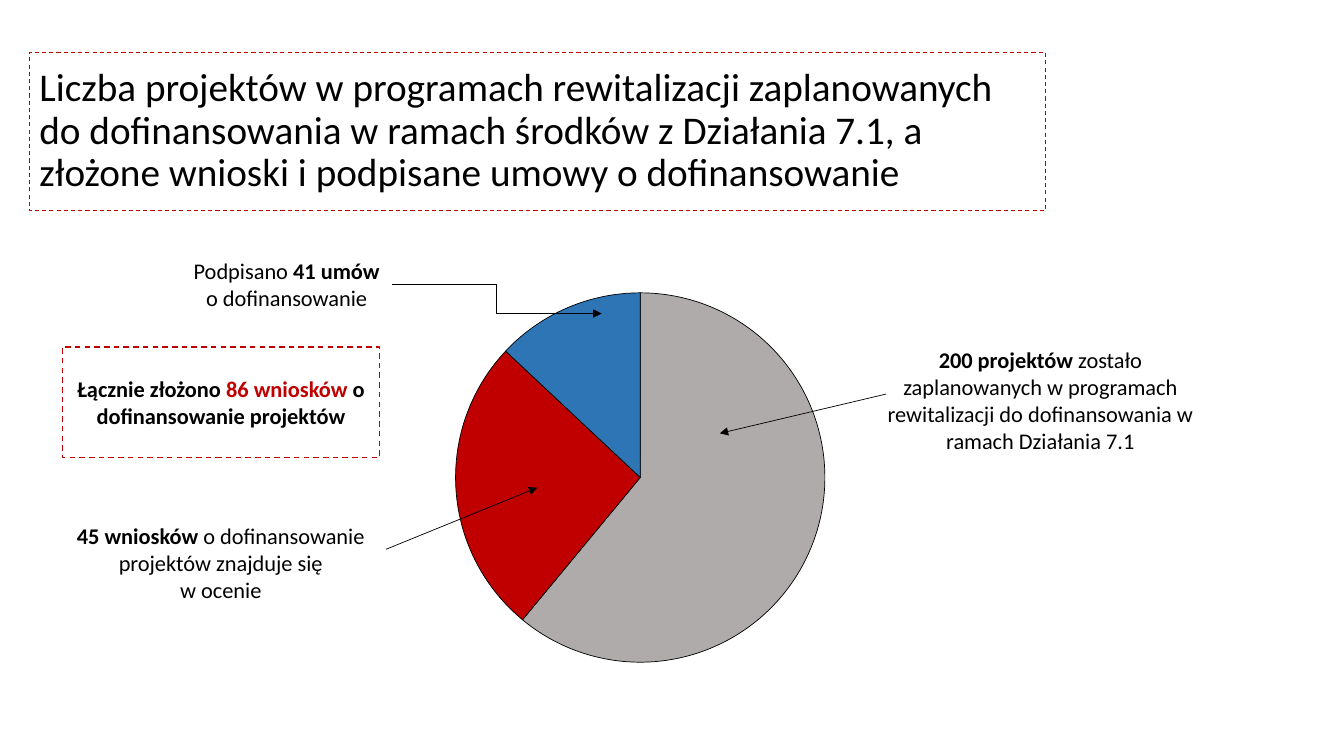
from dataclasses import dataclass

from lxml.etree import SubElement
from pptx import Presentation
from pptx.chart.data import CategoryChartData
from pptx.dml.color import RGBColor
from pptx.enum.chart import XL_CHART_TYPE
from pptx.enum.dml import MSO_LINE
from pptx.enum.shapes import MSO_CONNECTOR, MSO_SHAPE
from pptx.enum.text import MSO_ANCHOR, PP_ALIGN
from pptx.oxml.ns import qn
from pptx.util import Cm, Pt


@dataclass(frozen=True)
class Theme:
    font: str = "Calibri"
    title_size: Pt = Pt(28)
    text_size: Pt = Pt(16)
    chart_size: Pt = Pt(10)
    black: RGBColor = RGBColor(0x00, 0x00, 0x00)
    white: RGBColor = RGBColor(0xFF, 0xFF, 0xFF)
    red: RGBColor = RGBColor(0xC0, 0x00, 0x00)
    gray: RGBColor = RGBColor(0xAF, 0xAB, 0xAB)
    blue: RGBColor = RGBColor(0x2E, 0x75, 0xB6)


theme = Theme()


def style_font(font, color=theme.black, **formats):
    for attribute, value in {"name": theme.font, "size": theme.text_size, **formats}.items():
        setattr(font, attribute, value)
    font.color.rgb = color


def style_line(line, color, width, dash=None):
    line.color.rgb = color
    line.width = Pt(width)
    if dash:
        line.dash_style = dash


presentation = Presentation()
presentation.slide_width, presentation.slide_height = Cm(33.87), Cm(19.05)
slide = presentation.slides.add_slide(presentation.slide_layouts[5])
shapes = slide.shapes

# Heading
heading = shapes.title
heading_place = {"left": 0.74, "top": 1.32, "width": 25.6, "height": 3.99}
for side, length in heading_place.items():
    setattr(heading, side, Cm(length))
style_line(heading.line, theme.red, 0.75, MSO_LINE.DASH)
heading.text_frame.text = (
    "Liczba projektów w programach rewitalizacji zaplanowanych do dofinansowania "
    "w ramach środków z Działania 7.1, a złożone wnioski i podpisane umowy o dofinansowanie"
)
heading.text_frame.word_wrap = True
heading.text_frame.vertical_anchor = MSO_ANCHOR.MIDDLE
heading_paragraph = heading.text_frame.paragraphs[0]
heading_paragraph.alignment = PP_ALIGN.LEFT
heading_paragraph.line_spacing = 0.9
style_font(heading_paragraph.runs[0].font, size=theme.title_size)

# Pie of planned projects, applications under assessment and signed agreements
shares = CategoryChartData()
shares.categories = ["1", "2", "3"]
shares.add_series("Series 1", (61, 26, 13))
pie = shapes.add_chart(
    XL_CHART_TYPE.PIE, Cm(6.73), Cm(6.98), Cm(19), Cm(10.01), shares
).chart
pie.has_title = False
pie.has_legend = False
style_font(pie.font, size=theme.chart_size)
pie.plots[0].vary_by_categories = False
for index, color in enumerate((theme.gray, theme.red, theme.blue)):
    slice_format = pie.plots[0].series[0].points[index].format
    slice_format.fill.solid()
    slice_format.fill.fore_color.rgb = color
    style_line(slice_format.line, theme.black, 0.5)

plot_area = pie.plots[0].series[0].format and pie.element.find(".//" + qn("c:plotArea"))
layout = plot_area.find(qn("c:layout"))
if layout is None:
    layout = SubElement(plot_area, qn("c:layout"))
    plot_area.insert(0, layout)
manual = SubElement(layout, qn("c:manualLayout"))
plot_layout = {
    "layoutTarget": "inner", "xMode": "edge", "yMode": "edge",
    "x": 0.25, "y": 0.04, "w": 0.49, "h": 0.93,
}
for setting, value in plot_layout.items():
    SubElement(manual, qn(f"c:{setting}")).set("val", str(value))

# Notes around the pie: place, then paragraphs of (text, bold, colour)
notes = {
    "planned": ((22.12, 8.48, 8.2, 3.2), [[
        ("200 projektów ", True, theme.black),
        ("zostało zaplanowanych w programach rewitalizacji do dofinansowania "
         "w ramach Działania 7.1", False, theme.black),
    ]]),
    "assessed": ((1.4, 12.98, 8.33, 2.39), [
        [("45 wniosków ", True, theme.black),
         ("o dofinansowanie projektów znajduje się", False, theme.black)],
        [("w ocenie", False, theme.black)],
    ]),
    "signed": ((4.57, 6.25, 5.31, 1.83), [[
        ("Podpisano ", False, theme.black),
        ("41 umów ", True, theme.black),
        ("o dofinansowanie", False, theme.black),
    ]]),
    "total": ((1.57, 8.74, 8, 2.79), [[
        ("Łącznie złożono ", True, theme.black),
        ("86 wniosków ", True, theme.red),
        ("o dofinansowanie projektów", True, theme.black),
    ]]),
}
note_boxes = {}
for topic, (place, paragraphs) in notes.items():
    note = shapes.add_shape(MSO_SHAPE.RECTANGLE, *map(Cm, place))
    note.shadow.inherit = False
    note.fill.solid()
    note.fill.fore_color.rgb = theme.white
    note.line.fill.background()
    frame = note.text_frame
    frame.word_wrap = True
    frame.vertical_anchor = MSO_ANCHOR.MIDDLE
    for index, parts in enumerate(paragraphs):
        paragraph = frame.add_paragraph() if index else frame.paragraphs[0]
        paragraph.alignment = PP_ALIGN.CENTER
        for text, bold, color in parts:
            run = paragraph.add_run()
            run.text = text
            style_font(run.font, color, bold=bold)
    note_boxes[topic] = note
style_line(note_boxes["total"].line, theme.red, 1, MSO_LINE.DASH)

# Arrows from the notes to their slices
arrows = {
    "planned": (MSO_CONNECTOR.STRAIGHT, (22.33, 9.93, 18.14, 10.92)),
    "signed": (MSO_CONNECTOR.ELBOW, (9.88, 7.16, 15.16, 7.9)),
    "assessed": (MSO_CONNECTOR.STRAIGHT, (9.73, 13.84, 13.54, 12.29)),
}
for topic, (kind, ends) in arrows.items():
    arrow = shapes.add_connector(kind, *map(Cm, ends))
    if kind == MSO_CONNECTOR.ELBOW:
        arrow.begin_connect(note_boxes[topic], 3)
    style_line(arrow.line, theme.black, 0.5)
    properties = arrow.element.spPr
    SubElement(properties.find(qn("a:ln")), qn("a:tailEnd")).set("type", "triangle")
    SubElement(properties, qn("a:effectLst"))

presentation.save("out.pptx")
